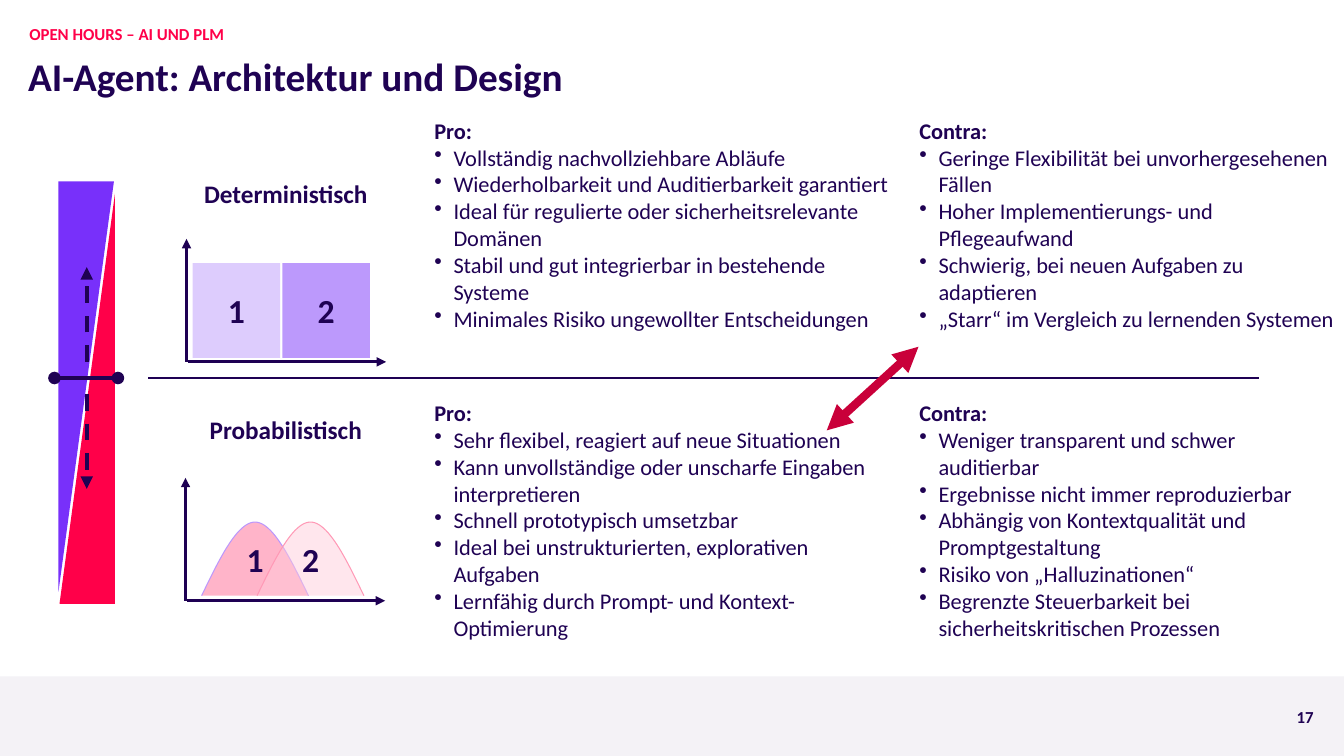
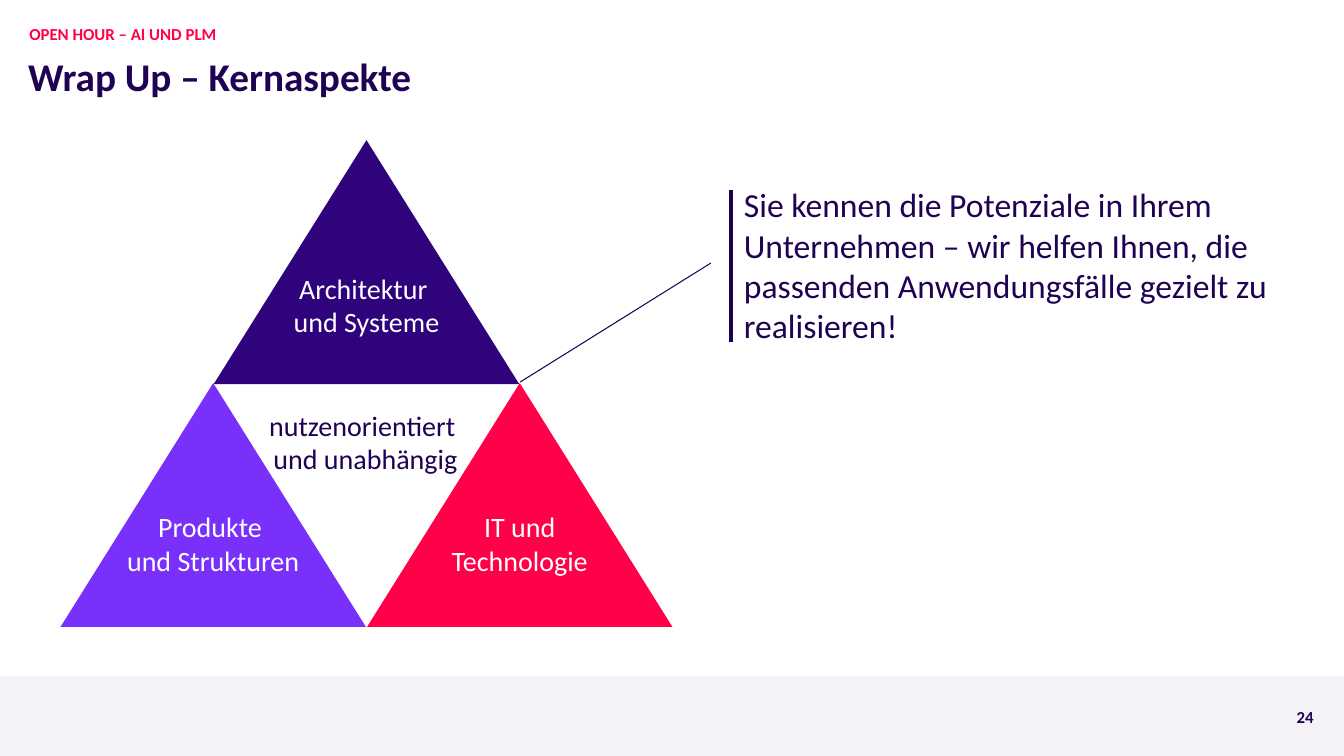
from lxml import etree
from pptx import Presentation
from pptx.dml.color import RGBColor
from pptx.enum.dml import MSO_LINE
from pptx.enum.shapes import MSO_CONNECTOR, MSO_SHAPE
from pptx.enum.text import MSO_ANCHOR, MSO_AUTO_SIZE, PP_ALIGN
from pptx.oxml.ns import qn
from pptx.util import Inches, Pt

RECT, TRI, WEDGE = MSO_SHAPE.RECTANGLE, MSO_SHAPE.ISOSCELES_TRIANGLE, MSO_SHAPE.RIGHT_TRIANGLE
LEFT, MID, RIGHT = PP_ALIGN.LEFT, PP_ALIGN.CENTER, PP_ALIGN.RIGHT
TOP, CENTER, BOTTOM = MSO_ANCHOR.TOP, MSO_ANCHOR.MIDDLE, MSO_ANCHOR.BOTTOM
STRAIGHT, DASH, NOFIT = MSO_CONNECTOR.STRAIGHT, MSO_LINE.DASH, MSO_AUTO_SIZE.NONE

# Colours
INK, AXIS, DEEP = "1F0253", "1E0053", "2E037C"
VIOLET, LILAC, RED, CRIMSON = "7830FA", "BB97FC", "FF0049", "C9003A"
PINK, ROSE, BLUSH = "FF6692", "FF99B6", "FFCCDB"
MIST, WHITE = "F4F2F6", "FFFFFF"

# Content of the design slide
LISTS = [
    ((4.21, 1.11, 4.77, 2.52), "Pro:", [
        "Vollständig nachvollziehbare Abläufe",
        "Wiederholbarkeit und Auditierbarkeit garantiert",
        "Ideal für regulierte oder sicherheitsrelevante Domänen",
        "Stabil und gut integrierbar in bestehende Systeme",
        "Minimales Risiko ungewollter Entscheidungen"]),
    ((9.02, 1.11, 4.31, 2.79), "Contra:", [
        "Geringe Flexibilität bei unvorhergesehenen Fällen",
        "Hoher Implementierungs- und Pflegeaufwand",
        "Schwierig, bei neuen Aufgaben zu adaptieren",
        "„Starr“ im Vergleich zu lernenden Systemen"]),
    ((4.21, 3.91, 4.75, 2.79), "Pro:", [
        "Sehr flexibel, reagiert auf neue Situationen",
        "Kann unvollständige oder unscharfe Eingaben interpretieren",
        "Schnell prototypisch umsetzbar",
        "Ideal bei unstrukturierten, explorativen Aufgaben",
        "Lernfähig durch Prompt- und Kontext-Optimierung"]),
    ((9.02, 3.91, 4.16, 2.79), "Contra:", [
        "Weniger transparent und schwer auditierbar",
        "Ergebnisse nicht immer reproduzierbar",
        "Abhängig von Kontextqualität und Promptgestaltung",
        "Risiko von „Halluzinationen“",
        "Begrenzte Steuerbarkeit bei sicherheitskritischen Prozessen"]),
]
HEADS = [("Deterministisch", 1.72), ("Probabilistisch", 4.06)]
WEDGES = [(-1.17, 3.68, 270, RED), (-1.18, 3.56, 90, VIOLET)]
AXES = [(1.85, 3.59), (1.84, 5.96)]
BLOCKS = [("1", 1.91, LILAC), ("2", 2.8, VIOLET)]
BELLS = [("1", 2, PINK, LILAC), ("2", 2.55, BLUSH, ROSE)]

# Content of the wrap-up slide
SIDE, RISE = 3.03, 2.42
PEAKS = [(0.6, 3.8, VIOLET), (3.64, 3.8, RED), (2.12, 1.39, DEEP)]
LABELS = [
    ("nutzenorientiert \nund unabhängig", 2.19, 4, 2.87, INK),
    ("IT und\nTechnologie", 3.64, 5.01, SIDE, WHITE),
    ("Produkte \nund Strukturen", 0.6, 5.01, SIDE, WHITE),
    ("Architektur \nund Systeme", 2.12, 2.64, SIDE, WHITE),
]
CLAIM = ("Sie kennen die Potenziale in Ihrem Unternehmen – wir helfen Ihnen, "
         "die passenden Anwendungsfälle gezielt zu realisieren!")


def rgb(code):
    return RGBColor.from_string(code)


def apply(item, values):
    for name, value in values.items():
        setattr(item, name, value)


def area(*sides):
    return [Inches(side) for side in sides]


def style(para, size, color=INK, bold=False, align=LEFT):
    para.alignment = align
    for run in para.runs:
        apply(run.font, {"name": "Calibri", "size": Pt(size), "bold": bold})
        run.font.color.rgb = rgb(color)


def fill(frame, text, size, color=INK, bold=False, align=LEFT, anchor=TOP, flat=False):
    apply(frame, {"word_wrap": True, "auto_size": NOFIT, "vertical_anchor": anchor})
    if flat:
        apply(frame, dict.fromkeys(
            ("margin_left", "margin_top", "margin_right", "margin_bottom"), 0))
    frame.text = ""
    para = frame.paragraphs[0]
    para.text = text
    style(para, size, color, bold, align)
    return para


def write(slide, box, text, size, **look):
    shape = slide.shapes.add_textbox(*area(*box))
    fill(shape.text_frame, text, size, **look)
    return shape.text_frame


def paint(shape, color, edge=None, alpha=None):
    shape.shadow.inherit = False
    shape.fill.solid()
    shape.fill.fore_color.rgb = rgb(color)
    if alpha:
        tone = shape.element.spPr.find(qn("a:solidFill"))[0]
        etree.SubElement(tone, qn("a:alpha"), val=str(alpha * 1000))
    if edge:
        shape.line.color.rgb = rgb(edge)
        shape.line.width = Pt(0.75)
    else:
        shape.line.fill.background()


def draw(slide, kind, box, color, **look):
    shape = slide.shapes.add_shape(kind, *area(*box))
    paint(shape, color, **look)
    return shape


def link(slide, start, end, color, width, head=None, tail=None, dash=False):
    line = slide.shapes.add_connector(STRAIGHT, *area(*start, *end))
    line.line.color.rgb = rgb(color)
    line.line.width = Pt(width)
    if dash:
        line.line.dash_style = DASH
    props = line.element.spPr
    for tag, kind in (("a:headEnd", head), ("a:tailEnd", tail)):
        if kind:
            etree.SubElement(props.find(qn("a:ln")), qn(tag), type=kind)
    etree.SubElement(props, qn("a:effectLst"))


def bullet(para, char=None, indent=0.0):
    props = para._p.get_or_add_pPr()
    props.set("marL", str(Inches(indent)))
    props.set("indent", str(-Inches(indent)))
    if char:
        etree.SubElement(props, qn("a:buChar"), char=char)
    else:
        etree.SubElement(props, qn("a:buNone"))


def bell(slide, left, base=5.91, half=0.53, high=0.73, steps=24):
    points = []
    for i in range(2 * steps + 1):
        t = 1 - abs(i / steps - 1)
        points.append(area(left + half * i / steps, base - high * (1.5 * t - 0.5 * t ** 3)))
    path = slide.shapes.build_freeform(*points[0])
    path.add_line_segments(points[1:], close=False)
    return path.convert_to_shape()


def start(prs, topic, title, number):
    slide = prs.slides.add_slide(prs.slide_layouts[1])
    head, body = slide.placeholders
    for shape, box in ((head, (0.28, 0.52, 12.44, 0.46)), (body, (0.29, 0.17, 12.46, 0.27))):
        apply(shape, dict(zip(("left", "top", "width", "height"), area(*box))))
    fill(head.text_frame, title, 28, bold=True, anchor=CENTER, flat=True)
    para = fill(body.text_frame, topic, 12, RED, bold=True, anchor=BOTTOM, flat=True)
    apply(para, {"line_spacing": 0.9, "space_before": Pt(0)})
    bullet(para)
    write(slide, (12.66, 6.89, 0.37, 0.32), number, 12,
          bold=True, align=RIGHT, anchor=BOTTOM, flat=True)
    return slide


def band(slide):
    # The footer band belongs to the shared layout
    shape = draw(slide, RECT, (0, 6.71, 13.33, 0.79), MIST)
    shape.element.xpath("p:nvSpPr/p:cNvPr")[0].set("id", "99")
    slide.slide_layout.shapes.element.insert(2, shape.element)


def design(slide):
    # Sliding scale
    for left, top, turn, color in WEDGES:
        draw(slide, WEDGE, (left, top, 4.07, 0.55), color).rotation = turn
    link(slide, (0.54, 3.75), (1.17, 3.75), INK, 3, head="oval", tail="oval")
    for sign in (-1, 1):
        link(slide, (0.86, 3.75 + sign * 0.16), (0.86, 3.75 + sign * 1.1),
             INK, 3, tail="triangle", dash=True)
    link(slide, (1.47, 3.75), (12.49, 3.75), AXIS, 0.75)

    # Small charts
    for text, top in HEADS:
        write(slide, (1.85, top, 1.97, 0.4), text, 18, bold=True, align=MID)
    for left, base in AXES:
        link(slide, (left + 0.01, base), (left + 1.98, base), AXIS, 2.25, tail="triangle")
        link(slide, (left, base), (left, base - 1.22), AXIS, 2.25, tail="triangle")
    marks = [(text, draw(slide, RECT, (left, 2.61, 0.87, 0.94), color, alpha=49))
             for text, left, color in BLOCKS]
    for text, left, color, edge in BELLS:
        curve = bell(slide, left)
        paint(curve, color, edge, 49)
        marks.append((text, curve))
    for text, shape in marks:
        fill(shape.text_frame, text, 24, bold=True, align=MID, anchor=CENTER)

    # Pros and cons
    for box, head, items in LISTS:
        frame = write(slide, box, head, 16, bold=True)
        for item in items:
            para = frame.add_paragraph()
            para.text = item
            bullet(para, "•", 0.19)
            style(para, 16)
    link(slide, (8.2, 4.27), (9.11, 3.44), CRIMSON, 6, head="triangle", tail="triangle")


def wrap(slide):
    # Pyramid
    for left, top, color in PEAKS:
        draw(slide, TRI, (left, top, SIDE, RISE), color)
    for text, left, top, width, color in LABELS:
        write(slide, (left, top, width, 0.77), text, 20, color=color, align=MID)

    # Claim
    write(slide, (7.28, 1.78, 5.41, 1.72), CLAIM, 24)
    link(slide, (7.25, 1.89), (7.25, 3.39), AXIS, 3)
    link(slide, (7.05, 2.61), (5.16, 3.79), AXIS, 0.75)


def main():
    prs = Presentation()
    prs.slide_width, prs.slide_height = area(13.33, 7.5)
    first = start(prs, "OPEN HOURS – AI UND PLM", "AI-Agent: Architektur und Design", "17")
    band(first)
    design(first)
    wrap(start(prs, "OPEN HOUR – AI UND PLM", "Wrap Up – Kernaspekte", "24"))
    prs.save("out.pptx")


if __name__ == "__main__":
    main()
